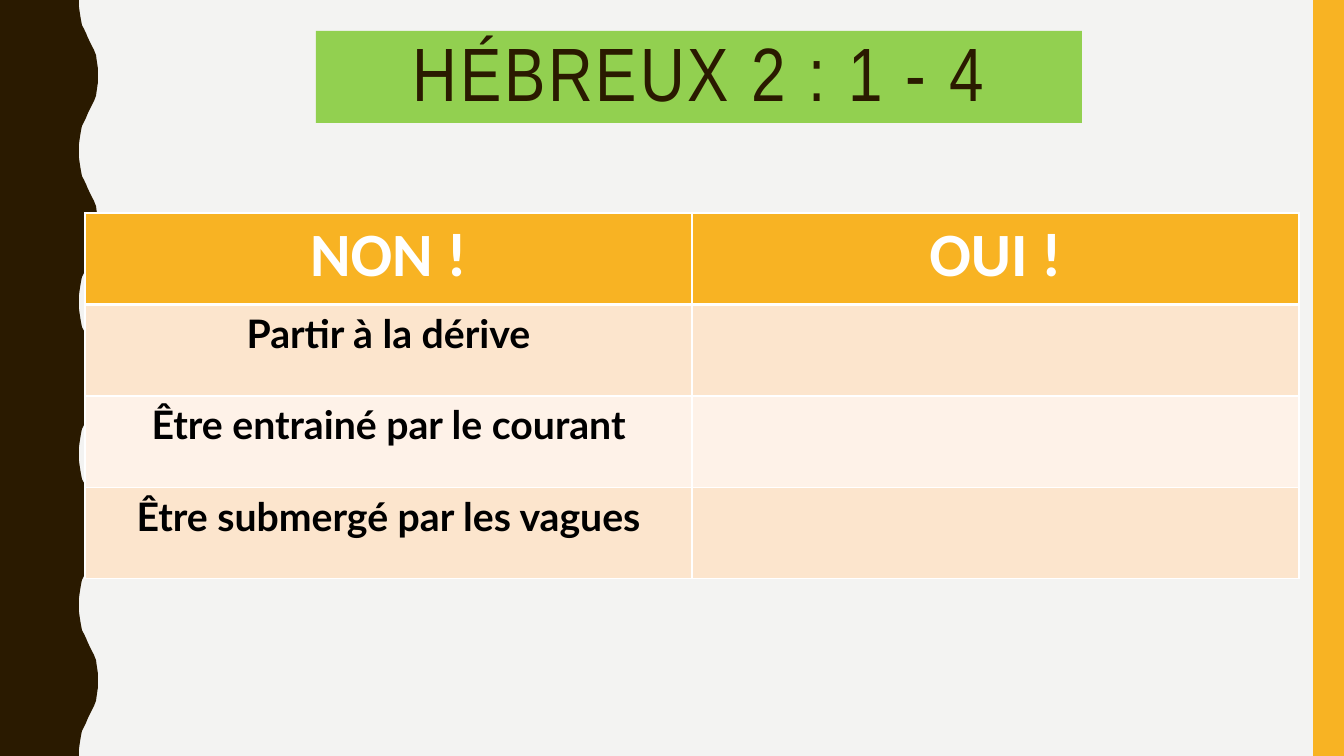
from lxml import etree
from pptx import Presentation
from pptx.dml.color import RGBColor
from pptx.enum.shapes import MSO_SHAPE
from pptx.enum.text import MSO_ANCHOR, PP_ALIGN
from pptx.oxml.ns import qn
from pptx.util import Pt

RECTANGLE = MSO_SHAPE.RECTANGLE
MIDDLE = MSO_ANCHOR.MIDDLE
CENTER = PP_ALIGN.CENTER

SLIDE_W, SLIDE_H = 1344, 756
EMU_PER_PX = 12192000 / SLIDE_W

COLORS = {
    "background": "F3F3F2",
    "brown": "2A1A00",
    "amber": "F8B323",
    "green": "92D050",
    "band_dark": "FCE5CD",
    "band_light": "FEF2E8",
    "white": "FFFFFF",
    "black": "000000",
}

# First half of one wave, trough to crest; the second half mirrors it
HALF_WAVE = [(79, 0), (79, 7), (80, 14), (81, 20), (82, 25), (84, 29), (86, 33), (88, 38),
             (90, 42), (92, 46), (94, 50), (96, 55), (97, 62), (98, 69), (98, 76)]
WAVE_COUNT = 5

TITLE = "HÉBREUX 2 : 1 - 4"
ROWS = [
    ("NON !", "OUI !"),
    ("Partir à la dérive", ""),
    ("Être entrainé par le courant", ""),
    ("Être submergé par les vagues", ""),
]


def px(length):
    return round(length * EMU_PER_PX)


def color(name):
    return RGBColor.from_string(COLORS[name])


def paint(part, fill):
    part.fill.solid()
    part.fill.fore_color.rgb = color(fill)


def finish(shape, fill):
    paint(shape, fill)
    shape.line.fill.background()
    shape.shadow.inherit = False


def write(frame, text, *, font, size, ink, bold=False, line_spacing=None, tracking=0):
    paragraph = frame.paragraphs[0]
    paragraph.alignment = CENTER
    if line_spacing:
        paragraph.line_spacing = line_spacing
    run = paragraph.add_run()
    run.text = text
    run.font.name = font
    run.font.size = Pt(size)
    run.font.bold = bold
    run.font.color.rgb = color(ink)
    if tracking:
        run.font._element.set("spc", str(tracking * 100))


def add_block(slide, box, fill):
    block = slide.shapes.add_shape(RECTANGLE, *map(px, box))
    finish(block, fill)
    return block


def add_wavy_edge(slide, box):
    left, top, _, height = box
    period = height / WAVE_COUNT
    wave = HALF_WAVE + [(x, period - y) for x, y in reversed(HALF_WAVE[:-1])]
    edge = [(left + x, top + n * period + y) for n in range(WAVE_COUNT) for x, y in wave]
    builder = slide.shapes.build_freeform(left, top, scale=EMU_PER_PX)
    builder.add_line_segments(edge + [(left, top + height)], close=True)
    finish(builder.convert_to_shape(), "brown")


def add_title(slide, box):
    banner = add_block(slide, box, "green")
    banner.text_frame.word_wrap = True
    banner.text_frame.vertical_anchor = MIDDLE
    write(banner.text_frame, TITLE, font="Arial Narrow", size=54, ink="brown",
          line_spacing=0.9, tracking=2)


def set_borders(cell, **widths):
    """Draw white borders, given in points by side; the lines come before the fill."""
    properties = cell._tc.get_or_add_tcPr()
    for index, side in enumerate("LRTB"):
        border = etree.Element(qn(f"a:ln{side}"), w=str(Pt(widths.get(side, 1))))
        solid = etree.SubElement(border, qn("a:solidFill"))
        etree.SubElement(solid, qn("a:srgbClr"), val=COLORS["white"])
        properties.insert(index, border)


def add_comparison(slide, box):
    table = slide.shapes.add_table(len(ROWS), len(ROWS[0]), *map(px, box)).table
    for row_index, row in enumerate(ROWS):
        table.rows[row_index].height = px(box[3] / len(ROWS))
        for column_index, text in enumerate(row):
            cell = table.cell(row_index, column_index)
            if row_index == 0:
                paint(cell, "amber")
                set_borders(cell, B=3)
                style = {"font": "Calibri", "size": 44, "ink": "white"}
            else:
                paint(cell, "band_dark" if row_index % 2 else "band_light")
                set_borders(cell, T=3 if row_index == 1 else 1)
                style = {"font": "Lato", "size": 28, "ink": "black"}
            if text:
                write(cell.text_frame, text, bold=True, **style)


def main():
    deck = Presentation()
    deck.slide_width, deck.slide_height = px(SLIDE_W), px(SLIDE_H)
    slide = deck.slides.add_slide(deck.slide_layouts[6])
    paint(slide.background, "background")

    # Side decoration
    add_wavy_edge(slide, (0, 0, 98, SLIDE_H))
    add_block(slide, (1313, 0, 31, SLIDE_H), "amber")

    # Content
    add_title(slide, (316, 31, 766, 92))
    add_comparison(slide, (85, 213, 1214, 366))

    deck.save("out.pptx")


if __name__ == "__main__":
    main()
